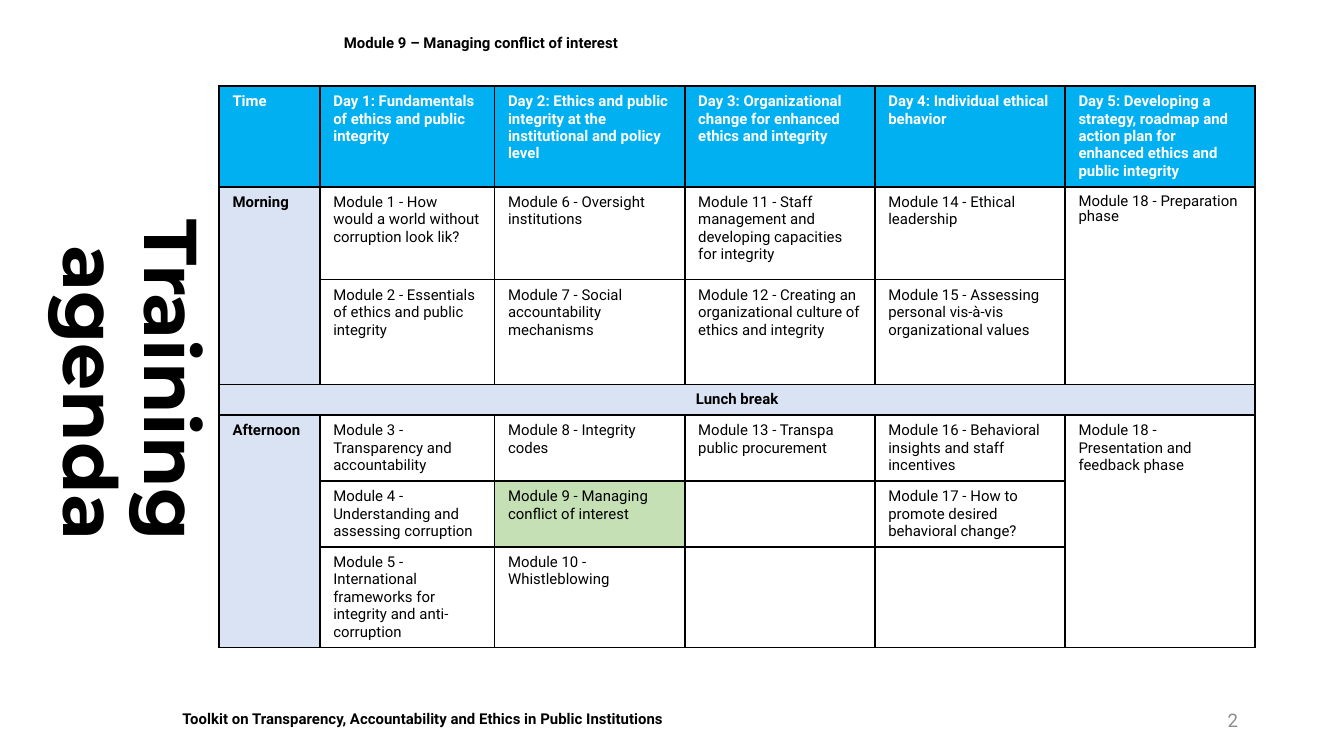
from lxml.etree import SubElement
from pptx import Presentation
from pptx.dml.color import RGBColor
from pptx.enum.text import MSO_ANCHOR as Anchor, MSO_AUTO_SIZE as AutoSize, PP_ALIGN as Align
from pptx.oxml.ns import qn
from pptx.util import Inches, Pt

WIDTH, HEIGHT = Inches(10), Inches(5.625)
BLACK = RGBColor(0, 0, 0)
WHITE = RGBColor(255, 255, 255)
GRAY = RGBColor(0x8C, 0x8C, 0x8C)
SKY = RGBColor(0x00, 0xB0, 0xF0)
PALE_BLUE = RGBColor(0xDA, 0xE3, 0xF3)
GREEN = RGBColor(0xC5, 0xE0, 0xB4)

# Agenda grid, in inches: the days after the first share the rest equally
AGENDA_WIDTH, TIME_WIDTH, DAY_1_WIDTH = 7.71, 0.75, 1.3
COLUMNS = [TIME_WIDTH, DAY_1_WIDTH] + [(AGENDA_WIDTH - TIME_WIDTH - DAY_1_WIDTH) / 4] * 4
ROWS = [0.75, 0.69, 0.78, 0.23, 0.49, 0.49, 0.75]
AGENDA = [
    ["Time",
     "Day 1: Fundamentals of ethics and public integrity",
     "Day 2: Ethics and public integrity at the institutional and policy level",
     "Day 3: Organizational change for enhanced ethics and integrity",
     "Day 4: Individual ethical behavior",
     "Day 5: Developing a strategy, roadmap and action plan for enhanced ethics "
     "and public integrity"],
    ["Morning",
     "Module 1 - How would a world without corruption look lik?",
     "Module 6 - Oversight institutions",
     "Module 11 - Staff management and developing capacities for integrity",
     "Module 14 - Ethical leadership",
     "Module 18 - Preparation phase"],
    ["",
     "Module 2 - Essentials of ethics and public integrity",
     "Module 7 - Social accountability mechanisms",
     "Module 12 - Creating an organizational culture of ethics and integrity",
     "Module 15 - Assessing personal vis-à-vis organizational values",
     ""],
    ["Lunch break", "", "", "", "", ""],
    ["Afternoon",
     "Module 3 - Transparency and accountability",
     "Module 8 - Integrity codes",
     "Module 13 - Transpa public procurement",
     "Module 16 - Behavioral insights and staff incentives",
     "Module 18 - Presentation and feedback phase"],
    ["",
     "Module 4 - Understanding and assessing corruption",
     "Module 9 - Managing conflict of interest",
     "",
     "Module 17 - How to promote desired behavioral change?",
     ""],
    ["",
     "Module 5 - International frameworks for integrity and anti-corruption",
     "Module 10 - Whistleblowing",
     "", "", ""],
]
# First and last cell of each merged block, as (row, column)
MERGES = [((1, 0), (2, 0)), ((1, 5), (2, 5)), ((3, 0), (3, 5)),
          ((4, 0), (6, 0)), ((4, 5), (6, 5))]
LUNCH_ROW = 3
CURRENT_MODULE = (5, 2)


def area(left, top, width, height):
    """Turn percentages of the slide into lengths."""
    return (int(WIDTH * left / 100), int(HEIGHT * top / 100),
            int(WIDTH * width / 100), int(HEIGHT * height / 100))


def write(frame, text, size=8, color=BLACK, bold=False, font="Roboto", align=Align.LEFT):
    paragraph = frame.paragraphs[0]
    paragraph.alignment = align
    run = paragraph.add_run()
    run.text = text
    formats = {"name": font, "size": Pt(size), "bold": bold}
    for key, value in formats.items():
        setattr(run.font, key, value)
    run.font.color.rgb = color
    return paragraph


def add_label(slide, place, text, anchor=Anchor.MIDDLE, **formats):
    label = slide.shapes.add_textbox(*area(*place))
    label.text_frame.word_wrap = True
    label.text_frame.vertical_anchor = anchor
    write(label.text_frame, text, **formats)
    return label


def add_side_title(slide, place, text):
    """Fill the upright area with a title that reads downwards."""
    left, top, width, height = area(*place)
    title = slide.shapes.title
    # A quarter turn about the centre swaps width and height
    title.left = left + (width - height) // 2
    title.top = top + (height - width) // 2
    title.width, title.height = height, width
    title.rotation = 90
    frame = title.text_frame
    formats = {"auto_size": AutoSize.NONE, "word_wrap": True,
               "vertical_anchor": Anchor.MIDDLE, "margin_right": Inches(1.05)}
    for key, value in formats.items():
        setattr(frame, key, value)
    heading = write(frame, text, size=40, bold=True, font="Montserrat", align=Align.RIGHT)
    heading.line_spacing = 0.9


def add_borders(cell):
    properties = cell._tc.get_or_add_tcPr()
    for side in ("lnL", "lnR", "lnT", "lnB"):
        line = SubElement(properties, qn(f"a:{side}"), w=str(Pt(1)))
        fill = SubElement(line, qn("a:solidFill"))
        SubElement(fill, qn("a:srgbClr"), val=str(BLACK))


def cell_fill(row, column):
    if row == 0:
        return SKY
    if column == 0 or row == LUNCH_ROW:
        return PALE_BLUE
    return GREEN if (row, column) == CURRENT_MODULE else WHITE


def add_agenda(slide, place):
    agenda = slide.shapes.add_table(len(ROWS), len(COLUMNS), *area(*place)).table
    agenda.first_row = agenda.horz_banding = False
    for column, width in zip(agenda.columns, COLUMNS):
        column.width = Inches(width)
    for row, height in zip(agenda.rows, ROWS):
        row.height = Inches(height)

    for r, texts in enumerate(AGENDA):
        for c, text in enumerate(texts):
            cell = agenda.cell(r, c)
            add_borders(cell)
            cell.margin_bottom = Inches(0.03)
            cell.fill.solid()
            cell.fill.fore_color.rgb = cell_fill(r, c)
            if text:
                entry = write(cell.text_frame, text,
                              color=WHITE if r == 0 else BLACK,
                              bold=r == 0 or c == 0,
                              align=Align.CENTER if r == LUNCH_ROW else Align.LEFT)
                if (r, c) == (1, 5):
                    entry.line_spacing = 0.9
    for first, last in MERGES:
        agenda.cell(*first).merge(agenda.cell(*last))


def main():
    deck = Presentation()
    deck.slide_width, deck.slide_height = WIDTH, HEIGHT
    slide = deck.slides.add_slide(deck.slide_layouts[5])

    # Footer
    footer = add_label(slide, (12.6, 92.98, 71.7, 4.27),
                       "Toolkit on Transparency, Accountability and Ethics in Public Institutions",
                       anchor=Anchor.TOP, bold=True)
    footer.fill.solid()
    footer.fill.fore_color.rgb = WHITE

    # Title, page number and module name
    add_side_title(slide, (2.8, 11.38, 13.5, 78.76), "Training agenda")
    add_label(slide, (70.6, 92.62, 22.5, 5.33), "2", size=10, color=GRAY, align=Align.RIGHT)
    add_label(slide, (24.6, 1.78, 68.5, 7.82), "Module 9 – Managing conflict of interest",
              bold=True)

    # Five-day agenda
    add_agenda(slide, (16.3, 11.38, 77.1, 74.31))

    deck.save("out.pptx")


if __name__ == "__main__":
    main()
